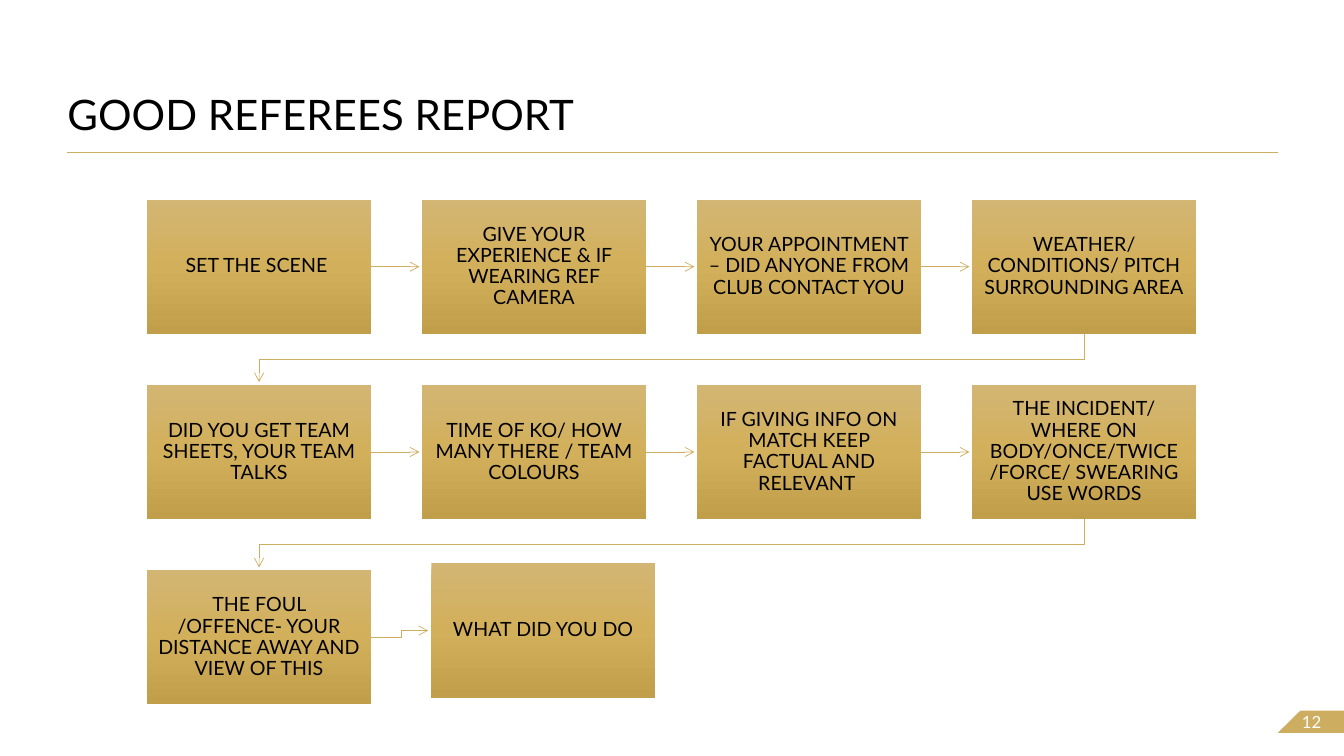
from lxml.etree import SubElement
from pptx import Presentation
from pptx.dml.color import RGBColor as RGB
from pptx.enum.shapes import MSO_CONNECTOR as LINK, MSO_SHAPE as SHAPE
from pptx.enum.text import MSO_ANCHOR as ANCHOR, MSO_AUTO_SIZE as AUTO, PP_ALIGN as ALIGN
from pptx.oxml import parse_xml
from pptx.oxml.ns import nsdecls, qn
from pptx.util import Cm, Pt

HUES = {"gold": "CDAD5F", "light": "D3B674", "mid": "D2AF5A", "dark": "C19E49",
        "black": "000000", "white": "FFFFFF"}
STEPS = [
    "SET THE SCENE ",
    "GIVE YOUR EXPERIENCE & IF WEARING REF CAMERA",
    "YOUR APPOINTMENT – DID ANYONE FROM CLUB CONTACT YOU",
    "WEATHER/CONDITIONS/ PITCH SURROUNDING AREA",
    "DID YOU GET TEAM SHEETS, YOUR TEAM TALKS",
    "TIME OF KO/ HOW MANY THERE / TEAM COLOURS",
    "IF GIVING INFO ON MATCH KEEP FACTUAL AND RELEVANT ",
    "THE INCIDENT/ WHERE ON BODY/ONCE/TWICE /FORCE/ SWEARING USE WORDS",
    "THE FOUL /OFFENCE- YOUR DISTANCE AWAY AND VIEW OF THIS",
]
LAST = "WHAT DID YOU DO"
COLS = 4
LEFT, TOP = 3.71, 5.03
WIDE, HIGH = 5.64, 3.38
GAP, REACH = 1.29, 1.22
LAST_X, LAST_Y = 10.87, 14.2


def color(name):
    return RGB.from_string(HUES[name])


def write(shape, text, size=14, hue="black", align=ALIGN.CENTER,
          anchor=ANCHOR.MIDDLE, inset=(0, 0, 0, 0), spacing=0.9):
    frame = shape.text_frame
    frame.word_wrap = True
    frame.auto_size = AUTO.NONE
    frame.vertical_anchor = anchor
    (frame.margin_left, frame.margin_top,
     frame.margin_right, frame.margin_bottom) = map(Cm, inset)
    frame.text = text
    para = frame.paragraphs[0]
    para.alignment = align
    para.line_spacing = spacing
    font = para.runs[0].font
    font.name, font.size = "Lato", Pt(size)
    font.color.rgb = color(hue)


def outline(slide, points, close):
    spots = [(Cm(x), Cm(y)) for x, y in points]
    pen = slide.shapes.build_freeform(*spots[0], scale=1.0)
    pen.add_line_segments(spots[1:], close=close)
    shape = pen.convert_to_shape()
    shape.shadow.inherit = False
    return shape


def route(slide, points, width=0.5, head=True):
    """Draw a straight connector for two points, or a bent path for more."""
    if len(points) == 2:
        ends = [Cm(v) for point in points for v in point]
        line = slide.shapes.add_connector(LINK.STRAIGHT, *ends)
    else:
        line = outline(slide, points, False)
        line.fill.background()
    line.line.color.rgb = color("gold")
    line.line.width = Pt(width)
    props = line._element.spPr
    if head:
        SubElement(props.find(qn("a:ln")), qn("a:tailEnd"), type="arrow")
    if len(points) == 2:
        SubElement(props, qn("a:effectLst"))


def card(slide, text, x, y):
    box = slide.shapes.add_shape(SHAPE.RECTANGLE, Cm(x), Cm(y), Cm(WIDE), Cm(HIGH))
    box.shadow.inherit = False
    box.line.fill.background()
    stops = "".join(
        f'<a:gs pos="{pos}"><a:srgbClr val="{HUES[hue]}"/></a:gs>'
        for pos, hue in ((0, "light"), (50000, "mid"), (100000, "dark")))
    box._element.spPr.insert(2, parse_xml(
        f'<a:gradFill {nsdecls("a")} rotWithShape="1"><a:gsLst>{stops}</a:gsLst>'
        '<a:lin ang="5400000" scaled="0"/></a:gradFill>'))
    write(box, text, inset=(0.28,) * 4)


def flow(slide):
    for i, text in enumerate(STEPS):
        row, col = divmod(i, COLS)
        x, y = LEFT + col * (WIDE + GAP), TOP + row * (HIGH + GAP)
        edge, base, mid = x + WIDE, y + HIGH, y + HIGH / 2
        if text == STEPS[-1]:
            aim, bend = LAST_Y + HIGH / 2, edge + 0.76
            route(slide, [(edge, mid), (bend, mid), (bend, aim), (LAST_X - 0.08, aim)])
        elif col == COLS - 1:
            start, end, turn = x + WIDE / 2, LEFT + WIDE / 2, base + GAP / 2
            route(slide, [(start, base), (start, turn), (end, turn), (end, base + REACH)])
        else:
            route(slide, [(edge, mid), (edge + REACH, mid)])
        card(slide, text, x, y)
    card(slide, LAST, LAST_X, LAST_Y)


def head(slide):
    route(slide, [(1.7, 3.84), (32.2, 3.84)], width=1, head=False)
    title = slide.shapes.title
    title.left, title.top, title.width, title.height = map(Cm, (1.7, 1.27, 27.05, 2.21))
    write(title, "GOOD REFEREES REPORT", size=30, align=ALIGN.LEFT,
          anchor=ANCHOR.BOTTOM, spacing=0.8)


def badge(slide):
    tab = outline(slide, [(32.77, 17.91), (33.87, 17.91), (33.87, 18.47), (32.2, 18.47)], True)
    tab.fill.solid()
    tab.fill.fore_color.rgb = color("gold")
    tab.line.fill.background()
    write(tab, "12", size=12, hue="white", align=ALIGN.LEFT,
          inset=(0.61, 0, 0, 0), spacing=1.0)


def main():
    deck = Presentation()
    deck.slide_width, deck.slide_height = Cm(33.87), Cm(19.05)
    slide = deck.slides.add_slide(deck.slide_layouts[5])
    head(slide)
    badge(slide)
    flow(slide)
    deck.save("out.pptx")


if __name__ == "__main__":
    main()
